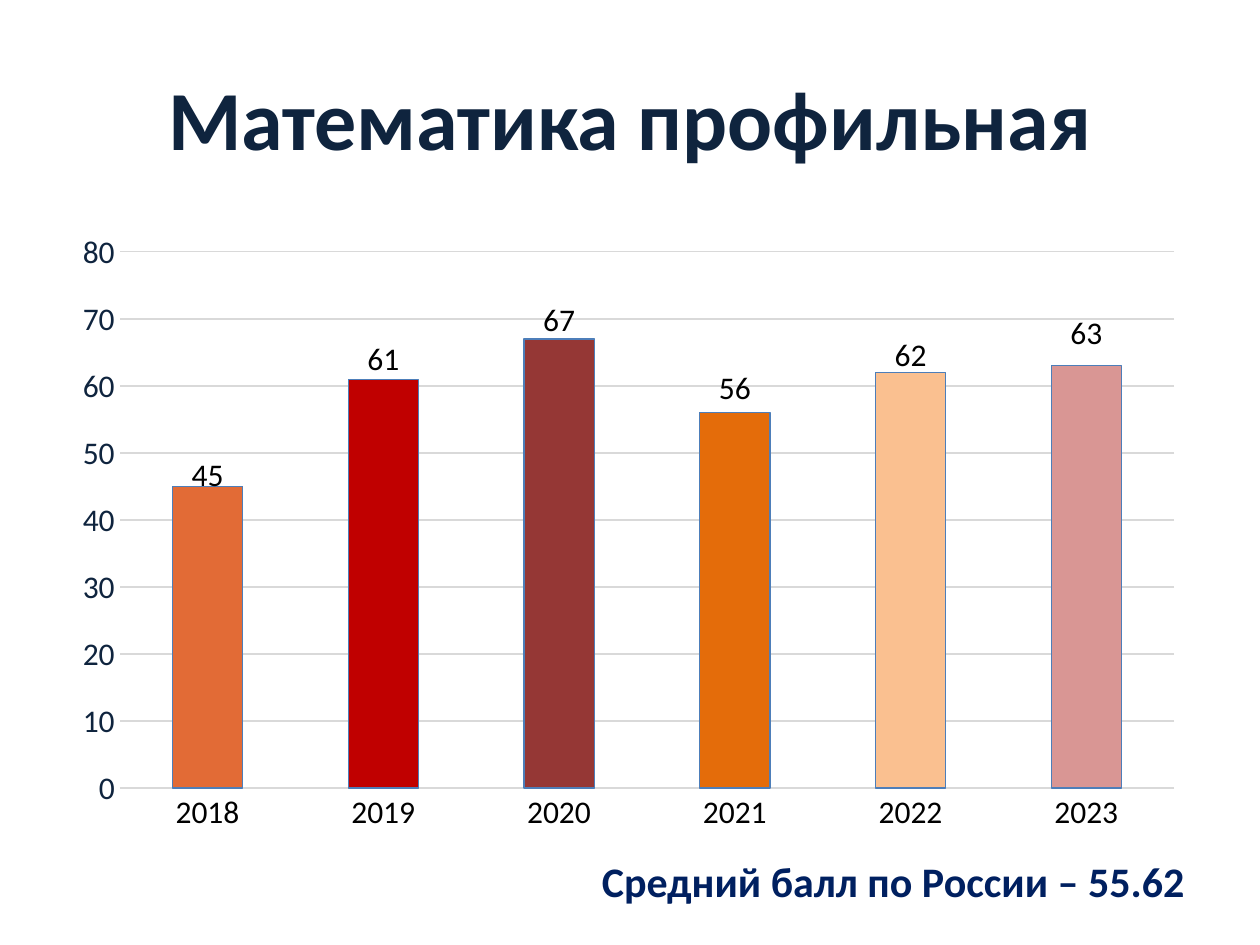
from pptx import Presentation
from pptx.chart.data import CategoryChartData
from pptx.dml.color import RGBColor
from pptx.enum.chart import XL_CHART_TYPE as ChartType, XL_LABEL_POSITION as LabelPos
from pptx.enum.chart import XL_TICK_MARK as TickMark
from pptx.enum.text import MSO_ANCHOR as Anchor, PP_ALIGN as Align
from pptx.oxml import parse_xml
from pptx.oxml.ns import nsdecls, qn
from pptx.util import Cm, Pt

FONT = "Calibri"
NAVY = "0F243E"
GRID = "D9D9D9"
# year, score, bar colour, label shift from the bar's centre (share of chart height)
SCORES = [
    ("2018", 45, "E26B36", -0.26),
    ("2019", 61, "C00000", -0.36),
    ("2020", 67, "953735", -0.39),
    ("2021", 56, "E46C0A", -0.34),
    ("2022", 62, "FAC090", -0.36),
    ("2023", 63, "D99694", -0.39),
]
NO_LEADER_LINES = (
    f'<c:extLst {nsdecls("c")}><c:ext uri="{{CE6537A1-D6FC-4f65-9D91-7224C49458BB}}" '
    'xmlns:c15="http://schemas.microsoft.com/office/drawing/2012/chart">'
    '<c15:showLeaderLines val="0"/></c:ext></c:extLst>')


def rgb(value):
    return RGBColor.from_string(value)


def style_font(font, size, color, bold=False):
    font.name = FONT
    font.size = Pt(size)
    font.bold = bold
    font.color.rgb = rgb(color)


def style_line(line, color):
    line.color.rgb = rgb(color)
    line.width = Pt(0.75)


def manual_layout(**fractions):
    """Return a c:layout element with the given x, y, w and h fractions."""
    target = '<c:layoutTarget val="inner"/>' if "w" in fractions else ""
    modes = "".join(f'<c:{k}Mode val="edge"/>' for k in "xy") if target else ""
    sizes = "".join(f'<c:{k} val="{v}"/>' for k, v in fractions.items())
    return parse_xml(f'<c:layout {nsdecls("c")}><c:manualLayout>'
                     f'{target}{modes}{sizes}</c:manualLayout></c:layout>')


def fill_text(shape, text, align, size, color):
    frame = shape.text_frame
    frame.word_wrap = True
    frame.text = text
    paragraph = frame.paragraphs[0]
    paragraph.alignment = align
    style_font(paragraph.runs[0].font, size, color, bold=True)


def place_title(slide, left, top, width, height):
    title = slide.shapes.title
    title.left, title.top, title.width, title.height = left, top, width, height
    title.text_frame.vertical_anchor = Anchor.MIDDLE
    fill_text(title, "Математика профильная", Align.CENTER, 48, NAVY)


def style_axes(chart):
    years, scale = chart.category_axis, chart.value_axis
    for axis, color in ((years, "000000"), (scale, NAVY)):
        axis.major_tick_mark = axis.minor_tick_mark = TickMark.NONE
        style_font(axis.tick_labels.font, 18, color)
    style_line(years.format.line, GRID)
    scale.minimum_scale, scale.maximum_scale, scale.major_unit = 0, 80, 10
    scale.format.line.fill.background()
    style_line(scale.major_gridlines.format.line, GRID)


def style_bars(chart):
    """Colour each bar and lift its label above the top edge."""
    series = chart.plots[0].series[0]
    series.data_labels.show_value = True
    for index, (_, _, color, _) in enumerate(SCORES):
        bar = series.points[index]
        bar.format.fill.solid()
        bar.format.fill.fore_color.rgb = rgb(color)
        style_line(bar.format.line, "4D7EB9")
        bar.data_label.position = LabelPos.CENTER
        style_font(bar.data_label.font, 18, "000000")
    labels = chart.element.find(".//" + qn("c:dLbls"))
    for label, (_, _, _, shift) in zip(labels.findall(qn("c:dLbl")), SCORES):
        label.insert(1, manual_layout(x=0, y=shift))
    for leader in labels.findall(qn("c:showLeaderLines")):
        leader.set("val", "0")
    labels.append(parse_xml(NO_LEADER_LINES))


def add_score_chart(slide, left, top, width, height):
    data = CategoryChartData()
    data.categories = [year for year, *_ in SCORES]
    data.add_series("Series 1", [score for _, score, *_ in SCORES])
    chart = slide.shapes.add_chart(
        ChartType.COLUMN_STACKED, left, top, width, height, data).chart
    chart.has_title = chart.has_legend = False
    style_font(chart.font, 10, "000000")
    plot = chart.plots[0]
    plot.gap_width, plot.overlap = 150, 100
    plot.vary_by_categories = False
    style_axes(chart)
    style_bars(chart)
    plot_area = chart.element.find(".//" + qn("c:plotArea"))
    for layout in plot_area.findall(qn("c:layout")):
        plot_area.remove(layout)
    plot_area.insert(0, manual_layout(x=0.05, y=0.05, w=0.93, h=0.86))


def add_average(slide, left, top, width, height):
    average = slide.shapes.add_textbox(left, top, width, height)
    fill_text(average, "Средний балл по России – 55.62", Align.RIGHT, 24, "002060")


def main():
    prs = Presentation()
    prs.slide_width, prs.slide_height = Cm(25.4), Cm(19.05)
    slide = prs.slides.add_slide(prs.slide_layouts[5])
    margin, content_width = Cm(1.27), Cm(22.86)
    place_title(slide, margin, Cm(0.76), content_width, Cm(3.18))
    add_score_chart(slide, margin, Cm(4.45), content_width, Cm(12.57))
    add_average(slide, Cm(10.11), Cm(17.12), Cm(14.02), Cm(1.27))
    prs.save("out.pptx")


if __name__ == "__main__":
    main()
